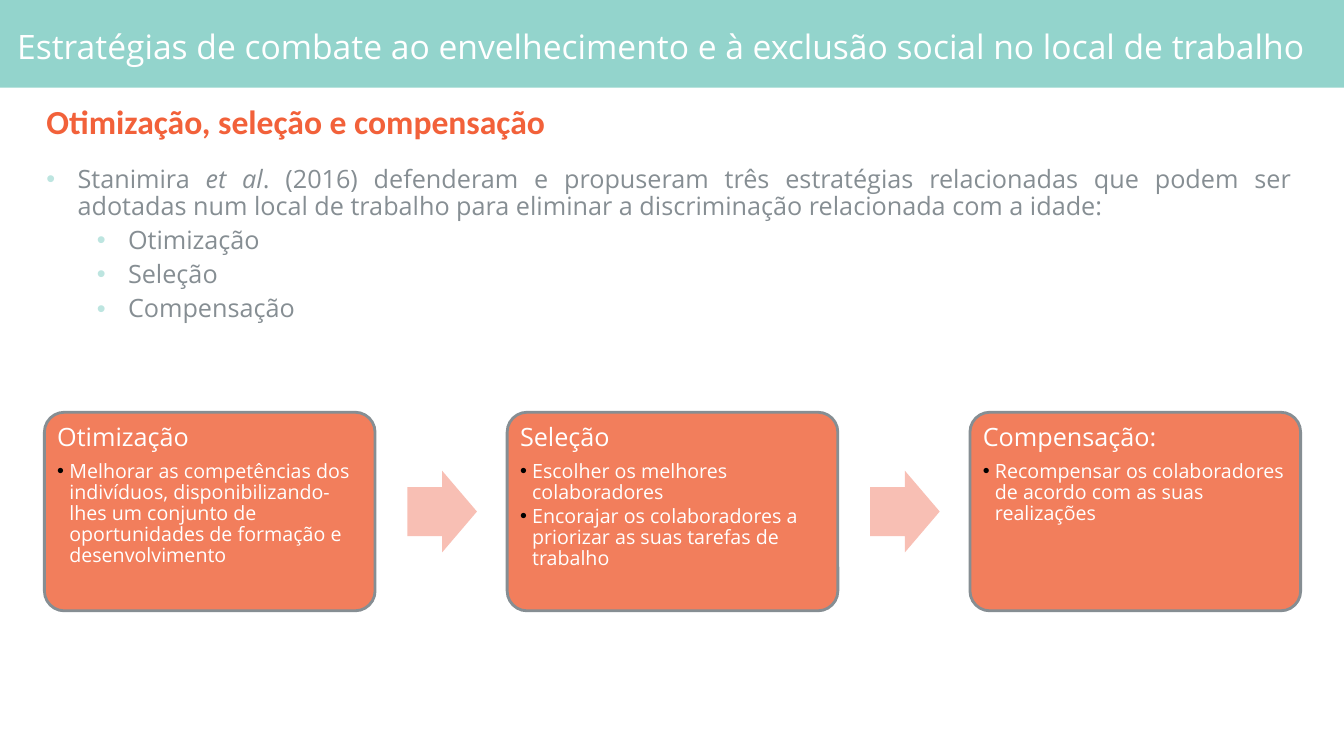
from dataclasses import dataclass

import pptx
import pptx.dml.color
import pptx.enum.shapes
import pptx.enum.text
import pptx.oxml.ns
import pptx.util
from lxml import etree

EMU_PER_PX = 9144  # 100 px to the inch
SHAPES = pptx.enum.shapes.MSO_SHAPE
ALIGN = pptx.enum.text.PP_ALIGN
ANCHOR = pptx.enum.text.MSO_ANCHOR


@dataclass(frozen=True)
class Theme:
    band: str = "93D4CC"
    white: str = "FFFFFF"
    heading: str = "F2613A"
    body: str = "868E93"
    body_bullet: str = "BDE5E0"
    card: str = "F27E5C"
    card_bullet: str = "000000"
    arrow: str = "F8BFB4"
    font: str = "Open Sans"
    heading_font: str = "Calibri"
    title_size: int = 24
    body_size: int = 18
    card_size: int = 14


THEME = Theme()

INTRO = [
    ("Stanimira ", False),
    ("et al", True),
    (". (2016) defenderam e propuseram três estratégias relacionadas que podem ser "
     "adotadas num local de trabalho para eliminar a discriminação relacionada com a idade:", False),
]
STRATEGIES = ["Otimização", "Seleção", "Compensação"]
CARDS = [
    ("Otimização", ["Melhorar as competências dos indivíduos, disponibilizando-lhes um "
                    "conjunto de oportunidades de formação e desenvolvimento"]),
    ("Seleção", ["Escolher os melhores colaboradores",
                 "Encorajar os colaboradores a priorizar as suas tarefas de trabalho"]),
    ("Compensação:", ["Recompensar os colaboradores de acordo com as suas realizações"]),
]
CARD_LEFT, CARD_TOP, CARD_WIDTH, CARD_HEIGHT = 44, 409, 328, 197
CARD_PITCH = 459
ARROW_WIDTH, ARROW_HEIGHT, ARROW_GAP = 69, 81, 32


def px(length):
    return pptx.util.Emu(length * EMU_PER_PX)


def rgb(value):
    return pptx.dml.color.RGBColor.from_string(value)


def set_bullet(para, color=None, indent=0, hang=0):
    """Give the paragraph its indents and a round bullet, or none without a colour."""
    properties = para._p.get_or_add_pPr()
    properties.set("marL", str(px(indent)))
    properties.set("indent", str(-px(hang)))

    def add(parent, tag, **attributes):
        return etree.SubElement(parent, pptx.oxml.ns.qn(tag), **attributes)

    if color is None:
        add(properties, "a:buNone")
    else:
        add(add(properties, "a:buClr"), "a:srgbClr", val=color)
        add(properties, "a:buFont", typeface="Arial")
        add(properties, "a:buChar", char="•")


def format_para(para, size, color, font=THEME.font, before=0, align=ALIGN.LEFT, bold=False):
    para.alignment = align
    para.line_spacing = 0.9
    para.space_before = pptx.util.Pt(before)
    para.space_after = pptx.util.Pt(0)
    for span in para.runs:
        span.font.size = pptx.util.Pt(size)
        span.font.name = font
        span.font.bold = bold
        span.font.color.rgb = rgb(color)


def set_frame(box, anchor, side, edge):
    frame = box.text_frame
    frame.word_wrap = True
    frame.auto_size = pptx.enum.text.MSO_AUTO_SIZE.NONE
    frame.vertical_anchor = anchor
    frame.margin_left = frame.margin_right = px(side)
    frame.margin_top = frame.margin_bottom = px(edge)
    return frame


def place(box, left, top, width, height):
    box.left, box.top, box.width, box.height = map(px, (left, top, width, height))


def add_block(page, kind, left, top, width, height, fill):
    block = page.shapes.add_shape(kind, px(left), px(top), px(width), px(height))
    block.shadow.inherit = False
    block.fill.solid()
    block.fill.fore_color.rgb = rgb(fill)
    block.line.fill.background()
    return block


def add_title(page):
    band = add_block(page, SHAPES.RECTANGLE, 0, 0, 1333, 87, THEME.band)
    page.shapes._spTree.insert(2, band._element)  # behind the title
    title = page.shapes.title
    place(title, 11, 9, 1306, 78)
    frame = set_frame(title, ANCHOR.MIDDLE, 6, 6)
    frame.text = "Estratégias de combate ao envelhecimento e à exclusão social no local de trabalho"
    format_para(frame.paragraphs[0], THEME.title_size, THEME.white)


def add_heading(box):
    place(box, 11, 93, 1306, 60)
    frame = set_frame(box, ANCHOR.MIDDLE, 10, 5)
    frame.text = "Otimização, seleção e compensação"
    para = frame.paragraphs[0]
    set_bullet(para, indent=25)
    format_para(para, THEME.title_size, THEME.heading, THEME.heading_font, bold=True)


def add_body(box):
    place(box, 11, 160, 1280, 559)
    frame = set_frame(box, ANCHOR.TOP, 10, 5)
    intro = frame.paragraphs[0]
    for text, italic in INTRO:
        span = intro.add_run()
        span.text = text
        span.font.italic = italic
    set_bullet(intro, THEME.body_bullet, 56, 31)
    format_para(intro, THEME.body_size, THEME.body, align=ALIGN.JUSTIFY)
    for strategy in STRATEGIES:
        para = frame.add_paragraph()
        para.text = strategy
        para.level = 1
        set_bullet(para, THEME.body_bullet, 106, 31)
        format_para(para, THEME.body_size, THEME.body, before=5)


def add_card(page, left, heading, points):
    card = add_block(page, SHAPES.ROUNDED_RECTANGLE, left, CARD_TOP,
                     CARD_WIDTH, CARD_HEIGHT, THEME.card)
    card.adjustments[0] = 0.1
    card.line.color.rgb = rgb(THEME.body)
    card.line.width = pptx.util.Pt(2)
    frame = set_frame(card, ANCHOR.TOP, 7, 7)
    frame.text = heading
    format_para(frame.paragraphs[0], THEME.body_size, THEME.white)
    for number, point in enumerate(points):
        para = frame.add_paragraph()
        para.text = point
        para.level = 1
        set_bullet(para, THEME.card_bullet, 12, 12)
        format_para(para, THEME.card_size, THEME.white, before=2.1 if number else 6.3)


def add_arrow(page, left):
    top = CARD_TOP + (CARD_HEIGHT - ARROW_HEIGHT) // 2
    arrow = add_block(page, SHAPES.RIGHT_ARROW, left, top, ARROW_WIDTH, ARROW_HEIGHT, THEME.arrow)
    arrow.adjustments[0] = 0.6
    arrow.adjustments[1] = 0.5


def main():
    deck = pptx.Presentation()
    deck.slide_width, deck.slide_height = px(1333), px(750)
    page = deck.slides.add_slide(deck.slide_layouts.get_by_name("Two Content"))

    # Title, heading and list
    add_title(page)
    heading, body = list(page.placeholders)[1:]
    add_heading(heading)
    add_body(body)

    # Three strategies joined by arrows
    for number, (name, points) in enumerate(CARDS):
        left = CARD_LEFT + number * CARD_PITCH
        if number:
            add_arrow(page, left - CARD_PITCH + CARD_WIDTH + ARROW_GAP)
        add_card(page, left, name, points)

    deck.save("out.pptx")


if __name__ == "__main__":
    main()
